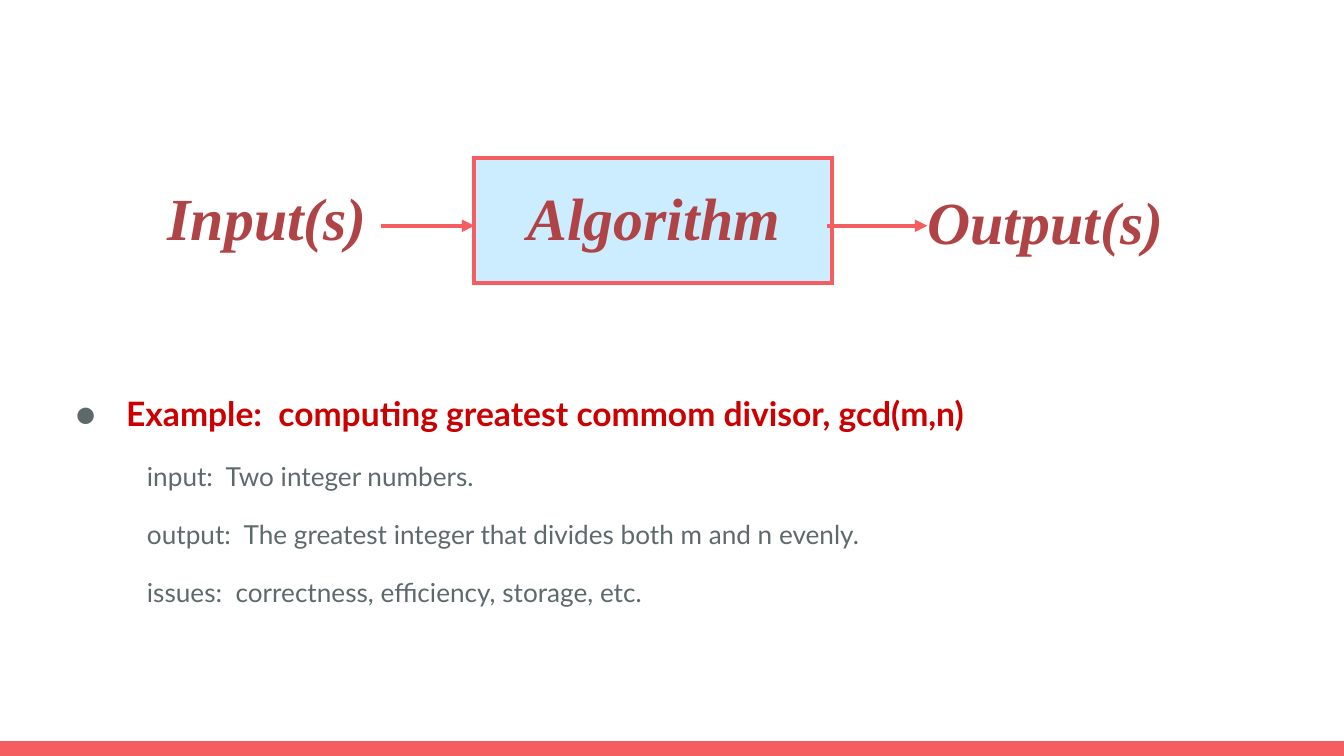
"""Builds a slide showing an algorithm between its inputs and outputs."""
from lxml.etree import SubElement
from pptx import Presentation
from pptx.dml.color import RGBColor
from pptx.enum.shapes import MSO_CONNECTOR, MSO_SHAPE
from pptx.enum.text import MSO_ANCHOR, PP_ALIGN
from pptx.oxml.ns import qn
from pptx.util import Pt

PX = 4572
CORAL = "F55E61"
GREY = "5E696C"


def color(code):
    return RGBColor.from_string(code)


def style(font, name, size, code, bold=False, italic=False):
    font.name, font.size = name, Pt(size)
    font.bold, font.italic = bold, italic
    font.color.rgb = color(code)


deck = Presentation()
deck.slide_width, deck.slide_height = 2000 * PX, 1125 * PX
slide = deck.slides.add_slide(deck.slide_layouts[6])
shapes = slide.shapes

bar = shapes.add_shape(MSO_SHAPE.RECTANGLE, 0, 1103 * PX, 2000 * PX, 22 * PX)
bar.shadow.inherit = False
bar.fill.solid()
bar.fill.fore_color.rgb = color(CORAL)
bar.line.fill.background()

body = shapes.add_textbox(68 * PX, 572 * PX, 1864 * PX, 428 * PX)
frame = body.text_frame
frame.word_wrap = True
frame.margin_top = frame.margin_bottom = 20 * PX
frame.margin_left = frame.margin_right = 20 * PX

head = frame.paragraphs[0]
head.text = "Example:  computing greatest commom divisor, gcd(m,n)"
head.line_spacing = 0.9
props = head._p.get_or_add_pPr()
props.set("marL", str(100 * PX))
props.set("indent", str(-75 * PX))
tint = SubElement(props, qn("a:buClr"))
SubElement(tint, qn("a:srgbClr"), val=GREY)
SubElement(props, qn("a:buFont"), typeface="Lato")
SubElement(props, qn("a:buChar"), char="●")
style(head.font, "Lato", 18, "CC0000", bold=True)

for text in (
    "input:  Two integer numbers.",
    "output:  The greatest integer that divides both m and n evenly.",
    "issues:  correctness, efficiency, storage, etc.",
):
    item = frame.add_paragraph()
    item.text = text
    item.level = 1
    item.line_spacing = 0.9
    item.space_before = Pt(16)
    props = item._p.get_or_add_pPr()
    props.set("marL", str(200 * PX))
    props.set("indent", str(-69 * PX))
    SubElement(props, qn("a:buNone"))
    style(item.font, "Lato", 14, GREY)

box = shapes.add_shape(
    MSO_SHAPE.FLOWCHART_PROCESS, 706 * PX, 235 * PX, 532 * PX, 186 * PX
)
box.shadow.inherit = False
box.fill.solid()
box.fill.fore_color.rgb = color("CCECFF")
box.line.color.rgb = color(CORAL)
box.line.width = Pt(2.25)
SubElement(box.line._get_or_add_ln(), qn("a:miter"), lim="800000")

for start, end in ((567, 706), (1231, 1380)):
    arrow = shapes.add_connector(
        MSO_CONNECTOR.STRAIGHT, start * PX, 336 * PX, end * PX, 336 * PX
    )
    arrow.line.color.rgb = color(CORAL)
    arrow.line.width = Pt(2.25)
    SubElement(arrow.line._get_or_add_ln(), qn("a:tailEnd"), type="triangle")
    SubElement(arrow._element.spPr, qn("a:effectLst"))

for text, left, top, width in (
    ("Algorithm", 765, 259, 416),
    ("Input(s)", 228, 259, 340),
    ("Output(s)", 1359, 265, 394),
):
    label = shapes.add_textbox(left * PX, top * PX, width * PX, 128 * PX)
    frame = label.text_frame
    frame.word_wrap = False
    frame.vertical_anchor = MSO_ANCHOR.MIDDLE
    line = frame.paragraphs[0]
    line.text = text
    line.alignment = PP_ALIGN.CENTER
    style(line.font, "Times New Roman", 32, "AF4345", bold=True, italic=True)

deck.save("out.pptx")
